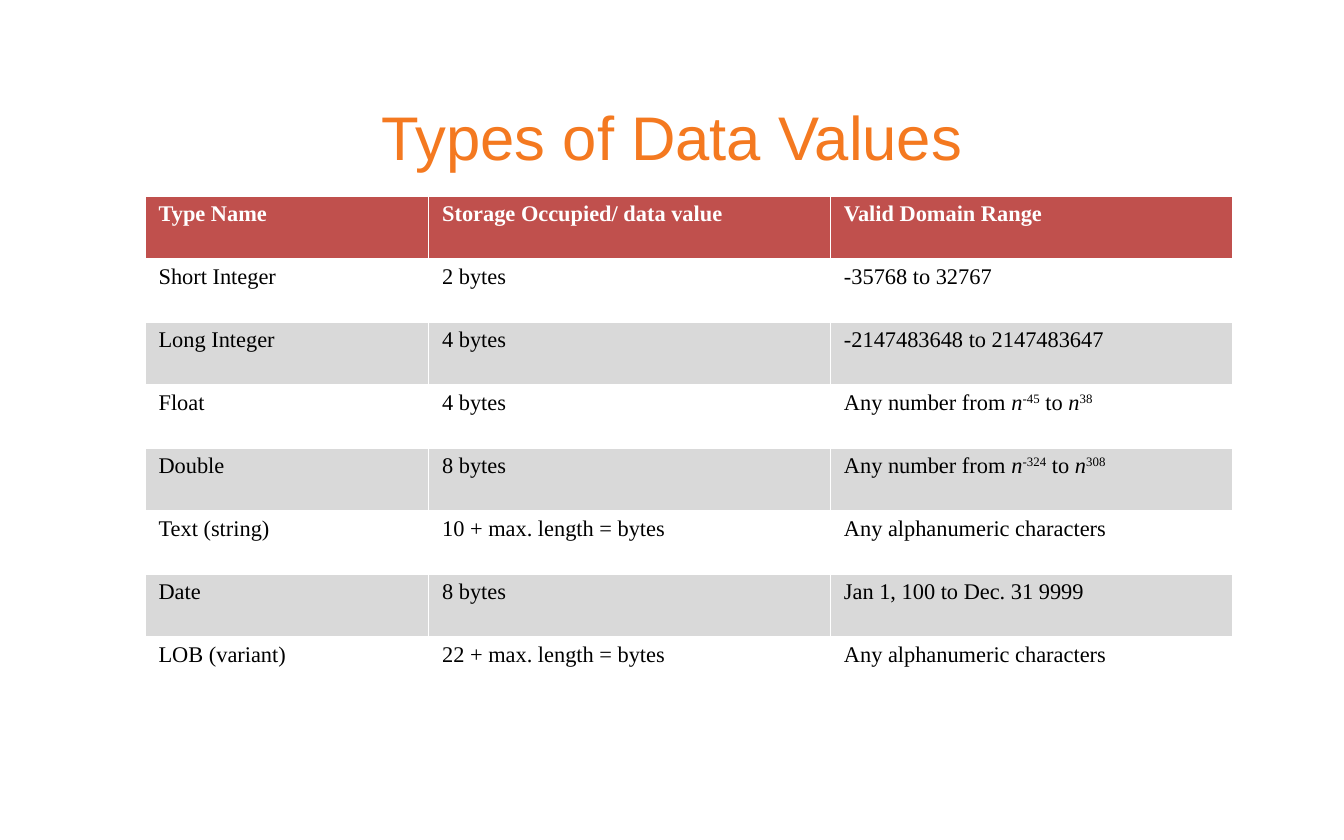
from dataclasses import dataclass
from typing import Any

from lxml.etree import SubElement
from pptx import Presentation
from pptx.dml.color import RGBColor
from pptx.enum.text import MSO_ANCHOR, PP_ALIGN
from pptx.oxml.ns import qn
from pptx.util import Inches, Pt

ORANGE = RGBColor(0xF4, 0x79, 0x20)
RED = RGBColor(0xC0, 0x50, 0x4D)
GREY = RGBColor(0xD9, 0xD9, 0xD9)
WHITE = RGBColor(0xFF, 0xFF, 0xFF)
BLACK = RGBColor(0, 0, 0)

TITLE = {"name": "Arial", "size": Pt(33)}
BODY = {"name": "Times New Roman", "size": Pt(12), "bold": False}
HEAD = BODY | {"bold": True}
INSET = {"margin_left": Inches(0.1), "margin_right": Inches(0.1),
         "margin_top": Inches(0.04), "margin_bottom": Inches(0.04)}
WIDTHS = (2.11, 2.99, 2.99)


@dataclass(frozen=True)
class Piece:
    text: str
    slant: bool = False
    raised: bool = False


@dataclass(frozen=True)
class Entry:
    name: str
    size: str
    span: str | tuple[Piece, ...]


def powers(low: str, high: str) -> tuple[Piece, ...]:
    """Return the pieces of a range between two powers of n."""
    base = Piece("n", slant=True)
    return (Piece("Any number from "), base, Piece(low, raised=True),
            Piece(" to "), base, Piece(high, raised=True))


ENTRIES = (
    Entry("Type Name", "Storage Occupied/ data value", "Valid Domain Range"),
    Entry("Short Integer", "2 bytes", "-35768 to 32767"),
    Entry("Long Integer", "4 bytes", "-2147483648 to 2147483647"),
    Entry("Float", "4 bytes", powers("-45", "38")),
    Entry("Double", "8 bytes", powers("-324", "308")),
    Entry("Text (string)", "10 + max. length = bytes", "Any alphanumeric characters"),
    Entry("Date", "8 bytes", "Jan 1, 100 to Dec. 31 9999"),
    Entry("LOB (variant)", "22 + max. length = bytes", "Any alphanumeric characters"),
)


def apply(item: Any, values: dict[str, Any]) -> None:
    """Set each named value on an item."""
    for key, value in values.items():
        setattr(item, key, value)


def write(para: Any, text: str | tuple[Piece, ...], form: dict[str, Any],
          color: RGBColor) -> None:
    """Fill a paragraph with styled runs."""
    pieces = (Piece(text),) if isinstance(text, str) else text
    for piece in pieces:
        run = para.add_run()
        run.text = piece.text
        apply(run.font, form | {"italic": piece.slant})
        run.font.color.rgb = color
        if piece.raised:
            run.font._element.set("baseline", "30000")


def border(cell: Any) -> None:
    """Give a cell thin white lines on all sides."""
    props = cell._tc.get_or_add_tcPr()
    for side in ("lnL", "lnR", "lnT", "lnB"):
        line = SubElement(props, qn(f"a:{side}"), w=str(Pt(1)))
        fill = SubElement(line, qn("a:solidFill"))
        SubElement(fill, qn("a:srgbClr"), val=str(WHITE))


def draw_cell(cell: Any, text: str | tuple[Piece, ...], row: int) -> None:
    """Draw one cell in the style of its row."""
    apply(cell, INSET)
    border(cell)
    if row % 2 and row > 0:
        cell.fill.background()
    else:
        cell.fill.solid()
        cell.fill.fore_color.rgb = GREY if row else RED
    para = cell.text_frame.paragraphs[0]
    props = para._p.get_or_add_pPr()
    props.set("marL", str(Inches(0.38)))
    props.set("indent", str(-Inches(0.38)))
    write(para, text, BODY if row else HEAD, BLACK if row else WHITE)


def draw_title(slide: Any, text: str) -> None:
    """Draw the centred heading."""
    box = slide.shapes.add_textbox(Inches(0.75), Inches(0.49), Inches(8.5), Inches(1.04))
    frame = box.text_frame
    apply(frame, {"word_wrap": True, "vertical_anchor": MSO_ANCHOR.MIDDLE})
    para = frame.paragraphs[0]
    para.alignment = PP_ALIGN.CENTER
    write(para, text, TITLE, ORANGE)


def draw_table(slide: Any, entries: tuple[Entry, ...]) -> None:
    """Draw the table of data types."""
    table = slide.shapes.add_table(
        len(entries), len(WIDTHS), Inches(1.08), Inches(1.46),
        Inches(sum(WIDTHS)), Inches(3.75)).table
    table.horz_banding = False
    for column, width in zip(table.columns, WIDTHS):
        column.width = Inches(width)
    for row, entry in enumerate(entries):
        for col, text in enumerate((entry.name, entry.size, entry.span)):
            draw_cell(table.cell(row, col), text, row)


def main() -> None:
    """Build and save the slide."""
    deck = Presentation()
    apply(deck, {"slide_width": Inches(10), "slide_height": Inches(6.25)})
    slide = deck.slides.add_slide(deck.slide_layouts[6])
    draw_title(slide, "Types of Data Values")
    draw_table(slide, ENTRIES)
    deck.save("out.pptx")


if __name__ == "__main__":
    main()
